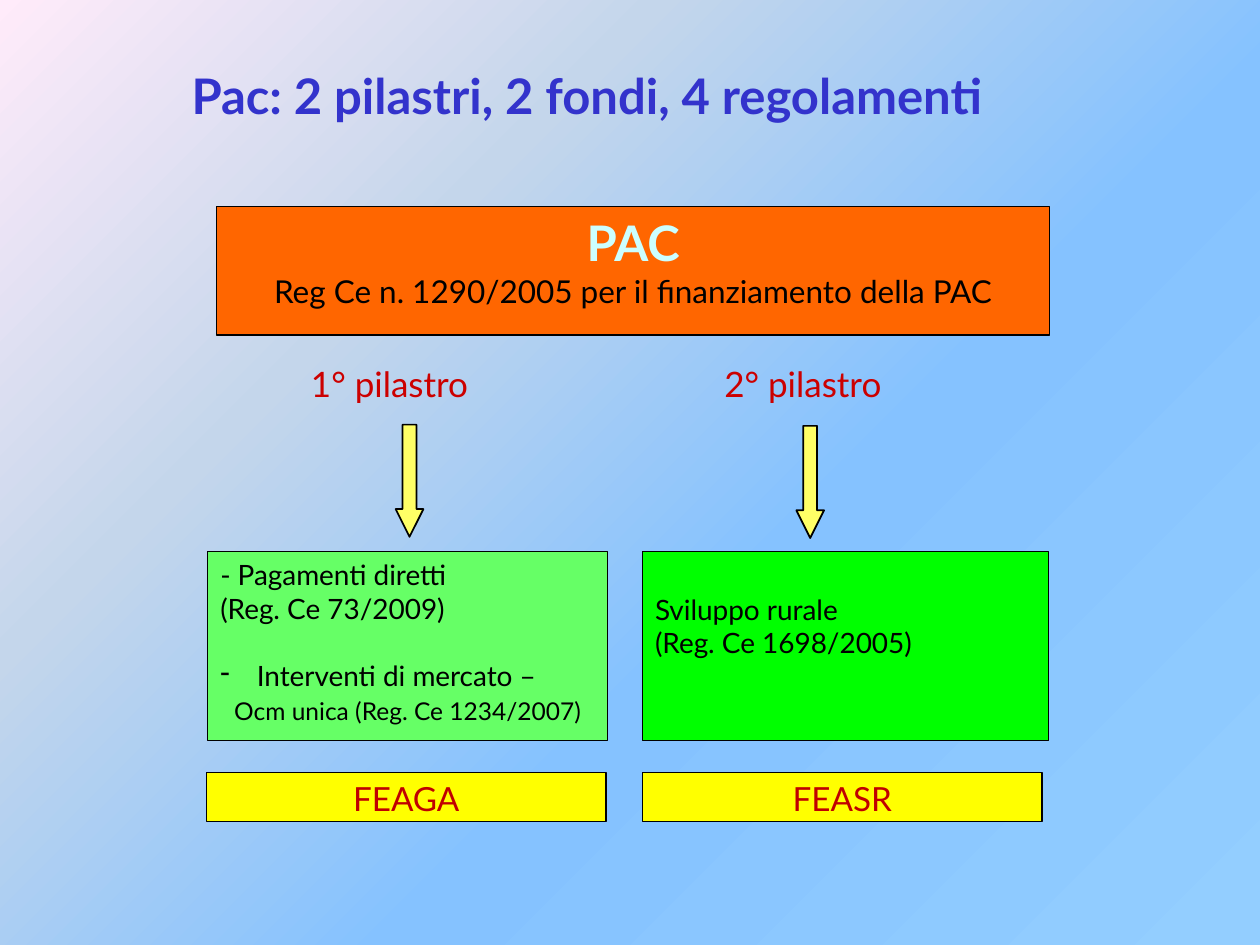
import pptx
import pptx.util
import pptx.dml.color
import pptx.enum.shapes
import pptx.enum.text
import pptx.oxml
import pptx.oxml.ns
from lxml import etree

Inches, Pt = pptx.util.Inches, pptx.util.Pt
RGB = pptx.dml.color.RGBColor.from_string
SHAPES = pptx.enum.shapes.MSO_SHAPE
ALIGN = pptx.enum.text.PP_ALIGN
TOP = pptx.enum.text.MSO_ANCHOR.TOP

COLORS = {
    "title": "3333CC", "black": "000000", "orange": "FF6600", "pale": "CCFFFF",
    "pillar": "CC0000", "arrow": "FFFF66", "light_green": "66FF66",
    "green": "00FF00", "yellow": "FFFF00", "fund": "C00000",
}
BACKGROUND_STOPS = [(0, "93CEFF"), (40, "85C2FF"), (70, "C4D6EB"), (100, "FFEBFA")]


def add_box(kind, left, top, width, height, fill, line_width=0.75):
    box = slide.shapes.add_shape(kind, Inches(left), Inches(top), Inches(width), Inches(height))
    box.shadow.inherit = False
    box.fill.solid()
    box.fill.fore_color.rgb = RGB(COLORS[fill])
    box.line.color.rgb = RGB(COLORS["black"])
    box.line.width = Pt(line_width)
    box.text_frame.word_wrap = True
    box.text_frame.vertical_anchor = TOP
    return box


def add_line(frame, text, size, color, bold=False, align=ALIGN.LEFT, before=0, indent=0, hanging=0, bullet=None):
    # The first line fills the paragraph that the frame already has
    paragraph = frame.paragraphs[0] if not frame.text else frame.add_paragraph()
    properties = paragraph._p.get_or_add_pPr()
    properties.set("marL", str(Inches(indent)))
    properties.set("indent", str(Inches(hanging)))
    paragraph.alignment = align
    paragraph.space_before = Pt(before)
    if bullet:
        etree.SubElement(properties, pptx.oxml.ns.qn("a:buChar")).set("char", bullet)
    run = paragraph.add_run()
    run.text = text
    run.font.name = "Lato"
    run.font.size = Pt(size)
    run.font.bold = bold
    run.font.color.rgb = RGB(COLORS[color])


prs = pptx.Presentation()
prs.slide_width, prs.slide_height = Inches(10), Inches(7.5)
slide = prs.slides.add_slide(prs.slide_layouts[5])

# Background: gradient spreading from the bottom right corner
slide.background.fill.gradient()
gradient = slide.background._cSld.find(".//" + pptx.oxml.ns.qn("a:gradFill"))
stops = "".join(
    f'<a:gs pos="{position * 1000}"><a:srgbClr val="{color}"/></a:gs>'
    for position, color in BACKGROUND_STOPS
)
gradient.getparent().replace(gradient, pptx.oxml.parse_xml(
    f'<a:gradFill {pptx.oxml.ns.nsdecls("a")} rotWithShape="0"><a:gsLst>{stops}</a:gsLst>'
    '<a:path path="circle"><a:fillToRect l="100000" t="100000"/></a:path></a:gradFill>'))

# Title
title = slide.shapes.title
title.left, title.top, title.width, title.height = Inches(1.33), Inches(0.47), Inches(8.03), Inches(0.57)
title.text_frame.word_wrap = True
title.text_frame.vertical_anchor = TOP
title.text_frame.auto_size = pptx.enum.text.MSO_AUTO_SIZE.NONE
add_line(title.text_frame, "Pac: 2 pilastri, 2 fondi, 4 regolamenti", 28, "title", bold=True,
         indent=0.59, hanging=-0.5)

# PAC and its funding regulation
pac = add_box(SHAPES.RECTANGLE, 1.72, 1.64, 6.61, 1.02, "orange").text_frame
add_line(pac, "PAC", 28, "pale", bold=True, align=ALIGN.CENTER)
add_line(pac, "Reg Ce n. 1290/2005 per il finanziamento della PAC", 18, "black", align=ALIGN.CENTER)

# Pillar labels, arrows and funds
for pillar, label_left, arrow_left, arrow_top, fund, fund_left in [
    ("1° pilastro", 2.37, 3.14, 3.37, "FEAGA", 1.64),
    ("2° pilastro", 5.65, 6.32, 3.38, "FEASR", 5.1),
]:
    label = slide.shapes.add_textbox(Inches(label_left), Inches(2.83), Inches(1.66), Inches(0.53))
    label.text_frame.word_wrap = True
    add_line(label.text_frame, pillar, 20, "pillar")
    arrow = add_box(SHAPES.DOWN_ARROW, arrow_left, arrow_top, 0.22, 0.89, "arrow", line_width=1)
    arrow.adjustments[0], arrow.adjustments[1] = 0.5, 1
    fund_box = add_box(SHAPES.RECTANGLE, fund_left, 6.13, 3.17, 0.39, "yellow")
    add_line(fund_box.text_frame, fund, 19, "fund", align=ALIGN.CENTER)

# Measures of the first pillar
market = add_box(SHAPES.RECTANGLE, 1.65, 4.38, 3.17, 1.5, "light_green").text_frame
add_line(market, "- Pagamenti diretti", 16, "black")
add_line(market, "(Reg. Ce 73/2009)", 16, "black")
add_line(market, "Interventi di mercato –", 16, "black", before=19.2, indent=0.29, hanging=-0.29, bullet="-")
add_line(market, "Ocm unica (Reg. Ce 1234/2007)", 14, "black", before=2, indent=0.11)

# Measures of the second pillar
rural = add_box(SHAPES.RECTANGLE, 5.1, 4.38, 3.22, 1.5, "green").text_frame
rural.margin_top = Inches(0.32)
add_line(rural, "Sviluppo rurale", 16, "black")
add_line(rural, "(Reg. Ce 1698/2005)", 16, "black")

prs.save("out.pptx")
